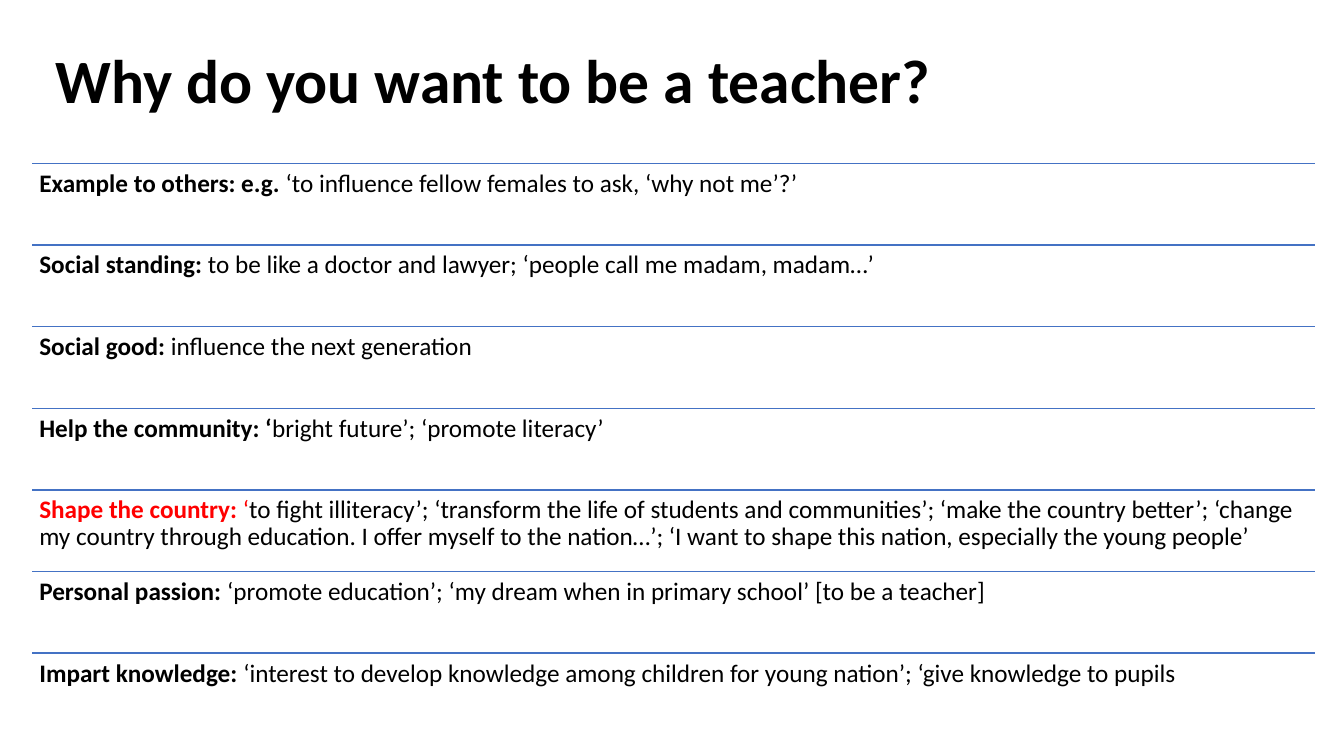
import pptx
import pptx.util
import pptx.dml.color
import pptx.enum.shapes
import pptx.enum.text
import pptx.oxml
import pptx.oxml.ns

Inches = pptx.util.Inches
COLOURS = {"text": "000000", "accent": "FF0000", "rule": "4472C4"}

REASONS = [
    [("Example to others: e.g. ", True, "text"),
     ("‘to influence fellow females to ask, ‘why not me’?’", False, "text")],
    [("Social standing: ", True, "text"),
     ("to be like a doctor and lawyer; ‘people call me madam, madam…’", False, "text")],
    [("Social good: ", True, "text"),
     ("influence the next generation", False, "text")],
    [("Help the community: ‘", True, "text"),
     ("bright future’; ‘promote literacy’", False, "text")],
    [("Shape the country: ", True, "accent"),
     ("‘", False, "accent"),
     ("to fight illiteracy’; ‘transform the life of students and communities’; "
      "‘make the country better’; ‘change my country through education. "
      "I offer myself to the nation…’; ‘I want to shape this nation, "
      "especially the young people’", False, "text")],
    [("Personal passion: ", True, "text"),
     ("‘promote education’; ‘my dream when in primary school’ [to be a teacher]",
      False, "text")],
    [("Impart knowledge: ", True, "text"),
     ("‘interest to develop knowledge among children for young nation’; "
      "‘give knowledge to pupils", False, "text")],
]


def colour(name):
    return pptx.dml.color.RGBColor.from_string(COLOURS[name])


def add_text(page, spans, left, top, width, height, *, size,
             anchor="TOP", inset_x=0.07, inset_y=0.07):
    box = page.shapes.add_textbox(Inches(left), Inches(top), Inches(width), Inches(height))
    frame = box.text_frame
    frame.word_wrap = True
    frame.vertical_anchor = pptx.enum.text.MSO_ANCHOR[anchor]
    frame.margin_left = frame.margin_right = Inches(inset_x)
    frame.margin_top = frame.margin_bottom = Inches(inset_y)
    para = frame.paragraphs[0]
    para.line_spacing = 0.9
    for text, bold, tint in spans:
        span = para.add_run()
        span.text = text
        span.font.name = "Calibri"
        span.font.size = pptx.util.Pt(size)
        span.font.bold = bold
        span.font.color.rgb = colour(tint)


def add_rule(page, left, top, width):
    rule = page.shapes.add_connector(
        pptx.enum.shapes.MSO_CONNECTOR.STRAIGHT,
        Inches(left), Inches(top), Inches(left + width), Inches(top))
    rule.line.color.rgb = colour("rule")
    rule.line.width = pptx.util.Pt(1)
    properties = rule._element.spPr
    properties.append(pptx.oxml.parse_xml(
        "<a:effectLst %s/>" % pptx.oxml.ns.nsdecls("a")))


def add_title(page, left, top, width, height):
    add_text(page, [("Why do you want to be a teacher?", True, "text")],
             left, top, width, height, size=44, anchor="MIDDLE",
             inset_x=0.1, inset_y=0.05)


def add_reasons(page, left, top, width, height):
    row_height = height / len(REASONS)
    for index, spans in enumerate(REASONS):
        row_top = top + index * row_height
        add_rule(page, left, row_top, width)
        add_text(page, spans, left, row_top, width, row_height, size=18)


def main():
    deck = pptx.Presentation()
    deck.slide_width = Inches(13.33)
    deck.slide_height = Inches(7.5)
    page = deck.slides.add_slide(deck.slide_layouts[6])
    add_title(page, 0.45, 0.1, 11.5, 1.45)
    add_reasons(page, 0.32, 1.62, 12.72, 5.67)
    deck.save("out.pptx")


if __name__ == "__main__":
    main()
